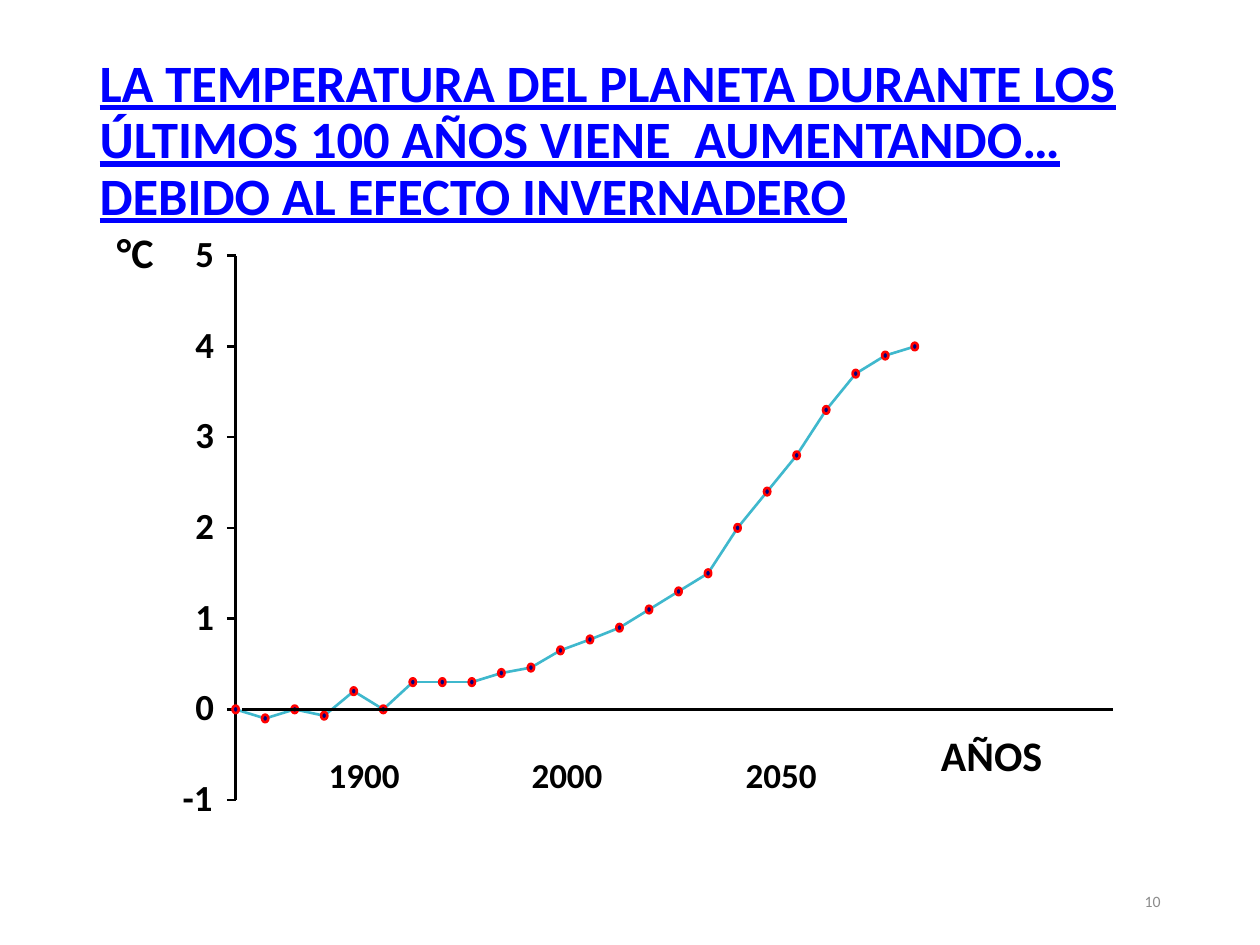
from dataclasses import dataclass
from itertools import pairwise

from lxml import etree
from pptx import Presentation
from pptx.dml.color import RGBColor
from pptx.enum import shapes, text
from pptx.oxml.ns import qn
from pptx.util import Inches, Pt


@dataclass(frozen=True)
class Theme:
    font: str = "Calibri"
    black: str = "000000"
    blue: str = "0000FF"
    gray: str = "8C8C8C"
    curve: str = "3FB8CD"
    navy: str = "000080"
    red: str = "FF0000"
    title: int = 30
    unit: int = 24
    tick: int = 21
    year: int = 20
    page: int = 9
    line: float = 1.5


@dataclass(frozen=True)
class Label:
    words: str
    left: float
    top: float
    width: float
    height: float
    size: int
    wrap: bool = False
    pad: bool = True


@dataclass(frozen=True)
class Point:
    x: float
    y: float


THEME = Theme()
LEFT, ZERO, RIGHT = 1.87, 5.63, 8.83  # vertical axis, zero line and its end
UNIT, STEP = 0.72, 5.39 / 23  # inches per degree and per reading
TICKS = range(-1, 6)
TEMPS = [0, -0.1, 0, -0.07, 0.2, 0, 0.3, 0.3, 0.3, 0.4, 0.46, 0.65,
         0.77, 0.9, 1.1, 1.3, 1.5, 2, 2.4, 2.8, 3.3, 3.7, 3.9, 4]
YEARS = {"1900": 2.51, "2000": 4.12, "2050": 5.82}


def height(temp: float) -> float:
    """Give the vertical place of a temperature."""
    return ZERO - temp * UNIT


def write(frame, words: str, *, size: int, color: str = THEME.black,
          bold: bool = True, under: bool = False, wrap: bool = True,
          pad: bool = True, align=text.PP_ALIGN.LEFT,
          anchor=text.MSO_ANCHOR.TOP, space: float = 1.0) -> None:
    frame.word_wrap = wrap
    frame.auto_size = text.MSO_AUTO_SIZE.NONE
    frame.vertical_anchor = anchor
    frame.margin_left = frame.margin_right = Inches(0.1 if pad else 0)
    frame.margin_top = frame.margin_bottom = Inches(0.05 if pad else 0)
    para = frame.paragraphs[0]
    para.alignment = align
    para.line_spacing = space
    run = para.add_run()
    run.text = words
    font = run.font
    font.name, font.size = THEME.font, Pt(size)
    font.bold, font.underline = bold, under
    font.color.rgb = RGBColor.from_string(color)


def add_label(slide, label: Label, **style) -> None:
    box = slide.shapes.add_textbox(Inches(label.left), Inches(label.top),
                                   Inches(label.width), Inches(label.height))
    write(box.text_frame, label.words, size=label.size,
          wrap=label.wrap, pad=label.pad, **style)


def add_line(slide, start: Point, end: Point,
             color: str = THEME.black) -> None:
    line = slide.shapes.add_connector(
        shapes.MSO_CONNECTOR.STRAIGHT, Inches(start.x), Inches(start.y),
        Inches(end.x), Inches(end.y))
    line.line.color.rgb = RGBColor.from_string(color)
    line.line.width = Pt(THEME.line)
    etree.SubElement(line._element.spPr, qn("a:effectLst"))


def add_dot(slide, point: Point, wide: float = 0.05,
            high: float = 0.06) -> None:
    dot = slide.shapes.add_shape(
        shapes.MSO_SHAPE.OVAL, Inches(point.x - wide / 2),
        Inches(point.y - high / 2), Inches(wide), Inches(high))
    dot.shadow.inherit = False
    dot.fill.solid()
    dot.fill.fore_color.rgb = RGBColor.from_string(THEME.navy)
    dot.line.color.rgb = RGBColor.from_string(THEME.red)
    dot.line.width = Pt(THEME.line)


def add_title(slide) -> None:
    title = slide.shapes.title
    title.left, title.top = Inches(0.69), Inches(0.4)
    title.width, title.height = Inches(8.62), Inches(1.45)
    write(title.text_frame,
          "LA TEMPERATURA DEL PLANETA DURANTE LOS ÚLTIMOS 100 AÑOS VIENE  "
          "AUMENTANDO… DEBIDO AL EFECTO INVERNADERO",
          size=THEME.title, color=THEME.blue, under=True,
          anchor=text.MSO_ANCHOR.MIDDLE, space=0.9)


def add_graph(slide) -> None:
    add_line(slide, Point(LEFT, height(TICKS[-1])),
             Point(LEFT, height(TICKS[0])))
    for tick in TICKS:
        add_line(slide, Point(LEFT - 0.07, height(tick)),
                 Point(LEFT, height(tick)))

    points = [Point(LEFT + i * STEP, height(t)) for i, t in enumerate(TEMPS)]
    for start, end in pairwise(points):
        add_line(slide, start, end, THEME.curve)
    for point in points:
        add_dot(slide, point)

    for tick in TICKS:
        wide = 0.26 if tick < 0 else 0.16
        add_label(slide, Label(str(tick), 1.71 - wide, height(tick) - 0.2,
                               wide, 0.35, THEME.tick, pad=False))
    for year, left in YEARS.items():
        add_label(slide, Label(year, left, 5.93, 0.82, 0.44, THEME.year))
    add_label(slide, Label("AÑOS", 7.37, 5.74, 1.34, 0.5, THEME.unit, True))
    add_label(slide, Label("°C", 0.83, 1.75, 0.73, 0.5, THEME.unit, True))
    add_line(slide, Point(LEFT + 0.05, ZERO), Point(RIGHT, ZERO))


def main() -> None:
    deck = Presentation()
    deck.slide_width, deck.slide_height = Inches(10), Inches(7.5)
    slide = deck.slides.add_slide(deck.slide_layouts[5])
    add_title(slide)
    add_label(slide, Label("10", 7.06, 6.95, 2.25, 0.4, THEME.page, True),
              color=THEME.gray, bold=False, align=text.PP_ALIGN.RIGHT,
              anchor=text.MSO_ANCHOR.MIDDLE)
    add_graph(slide)
    deck.save("out.pptx")


if __name__ == "__main__":
    main()
